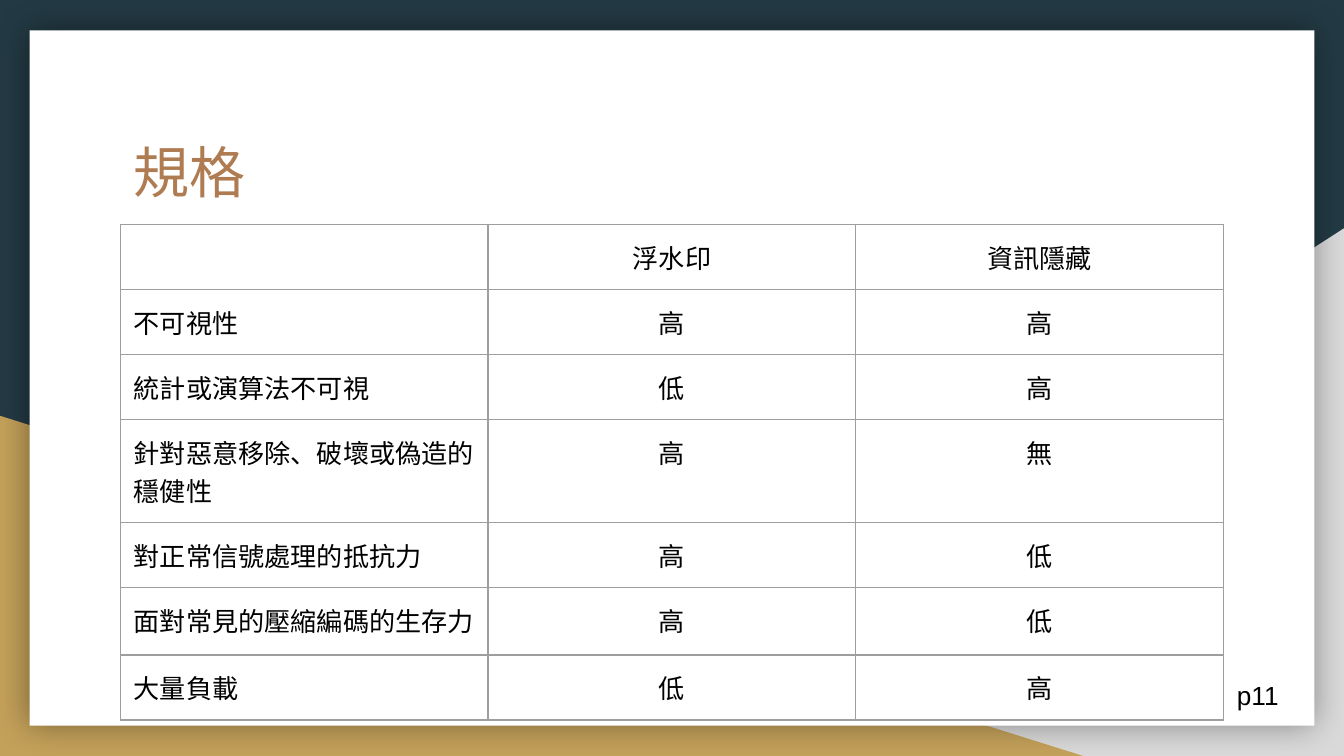
from dataclasses import dataclass

from lxml import etree
from pptx import Presentation
from pptx import util as u
from pptx.dml.color import RGBColor
from pptx.enum import shapes, text
from pptx.oxml import ns


@dataclass(frozen=True)
class Theme:
    navy: str = "233A44"
    grey: str = "D9D9D9"
    gold: str = "C4A15A"
    white: str = "FFFFFF"
    copper: str = "AF7B51"
    black: str = "000000"
    rule: str = "9E9E9E"
    title_font: str = "TeX Gyre Adventor"
    body_font: str = "Arial"
    title_size: int = 30
    body_size: int = 14


THEME = Theme()
WIDTH = u.Inches(10)
HEIGHT = WIDTH * 9 // 16
COL, ROW = WIDTH / 100, HEIGHT / 100
INSET = u.Inches(0.1)
LEFT, SPAN = 8.95, 82.1

ROWS = [
    ("", "浮水印", "資訊隱藏"),
    ("不可視性", "高", "高"),
    ("統計或演算法不可視", "低", "高"),
    ("針對惡意移除、破壞或偽造的穩健性", "高", "無"),
    ("對正常信號處理的抵抗力", "高", "低"),
    ("面對常見的壓縮編碼的生存力", "高", "低"),
    ("大量負載", "低", "高"),
]
ROW_HEIGHTS = [7.7, 7.7, 7.7, 12, 7.7, 8.9, 7.5]


def grid(left, top, width, height):
    return [int(v) for v in (left * COL, top * ROW, width * COL, height * ROW)]


def place(sp, *cells):
    sp.left, sp.top, sp.width, sp.height = grid(*cells)


def write(tf, words, size=THEME.body_size, font=THEME.body_font,
          color=THEME.black, align=text.PP_ALIGN.LEFT):
    p = tf.paragraphs[0]
    p.alignment = align
    r = p.add_run()
    r.text = words
    r.font.size = u.Pt(size)
    r.font.name = font
    r.font.color.rgb = RGBColor.from_string(color)


def set_insets(tf):
    tf.margin_left = tf.margin_right = tf.margin_top = tf.margin_bottom = INSET


def add_block(s, kind, color, *cells):
    sp = s.shapes.add_shape(kind, *grid(*cells))
    sp.shadow.inherit = False
    sp.fill.solid()
    sp.fill.fore_color.rgb = RGBColor.from_string(color)
    sp.line.fill.background()
    return sp


def add_color(parent, color):
    return etree.SubElement(parent, ns.qn("a:srgbClr"), val=color)


def add_glow_shadow(sp):
    effects = sp.element.spPr.find(ns.qn("a:effectLst"))
    shadow = etree.SubElement(effects, ns.qn("a:outerShdw"), blurRad=str(u.Pt(18)),
                              dist="0", dir="0", algn="ctr", rotWithShape="0")
    etree.SubElement(add_color(shadow, THEME.black), ns.qn("a:alpha"), val="40000")


def add_backdrop(s):
    s.background.fill.solid()
    s.background.fill.fore_color.rgb = RGBColor.from_string(THEME.navy)
    triangle = shapes.MSO_SHAPE.RIGHT_TRIANGLE
    grey = add_block(s, triangle, THEME.grey, 39.2, 30.2, 60.8, 69.8)
    grey.element.spPr.xfrm.set("flipH", "1")
    add_block(s, triangle, THEME.gold, 0, 55, 80.6, 45)
    card = add_block(s, shapes.MSO_SHAPE.RECTANGLE, THEME.white, 2.2, 4, 95.6, 92)
    add_glow_shadow(card)


def add_title(s, words):
    sp = s.shapes.title
    place(sp, LEFT, 16.4, SPAN, 18.5)
    tf = sp.text_frame
    tf.word_wrap = True
    tf.vertical_anchor = text.MSO_ANCHOR.TOP
    set_insets(tf)
    write(tf, words, size=THEME.title_size, font=THEME.title_font, color=THEME.copper)
    sp.element.getparent().append(sp.element)


def add_borders(cell):
    props = cell._tc.get_or_add_tcPr()
    for i, side in enumerate(("a:lnL", "a:lnR", "a:lnT", "a:lnB")):
        line = etree.Element(ns.qn(side), w=str(u.Pt(0.75)))
        add_color(etree.SubElement(line, ns.qn("a:solidFill")), THEME.rule)
        props.insert(i, line)


def add_comparison(s):
    cells = grid(LEFT, 29.7, SPAN, sum(ROW_HEIGHTS))
    table = s.shapes.add_table(len(ROWS), len(ROWS[0]), *cells).table
    table.first_row = table.horz_banding = False
    for column in table.columns:
        column.width = int(SPAN * COL / len(ROWS[0]))
    for i, (values, height) in enumerate(zip(ROWS, ROW_HEIGHTS)):
        table.rows[i].height = int(height * ROW)
        for j, value in enumerate(values):
            cell = table.cell(i, j)
            cell.fill.background()
            set_insets(cell)
            align = text.PP_ALIGN.CENTER if j else text.PP_ALIGN.LEFT
            write(cell.text_frame, value, align=align)
            add_borders(cell)


def add_page_number(s, words):
    tf = s.shapes.add_textbox(*grid(91.05, 89, 6.2, 6)).text_frame
    tf.word_wrap = True
    tf.auto_size = text.MSO_AUTO_SIZE.SHAPE_TO_FIT_TEXT
    write(tf, words)


def main():
    prs = Presentation()
    prs.slide_width, prs.slide_height = WIDTH, HEIGHT
    s = prs.slides.add_slide(prs.slide_layouts[5])
    add_backdrop(s)
    add_title(s, "規格")
    add_comparison(s)
    add_page_number(s, "p11")
    prs.save("out.pptx")


if __name__ == "__main__":
    main()
